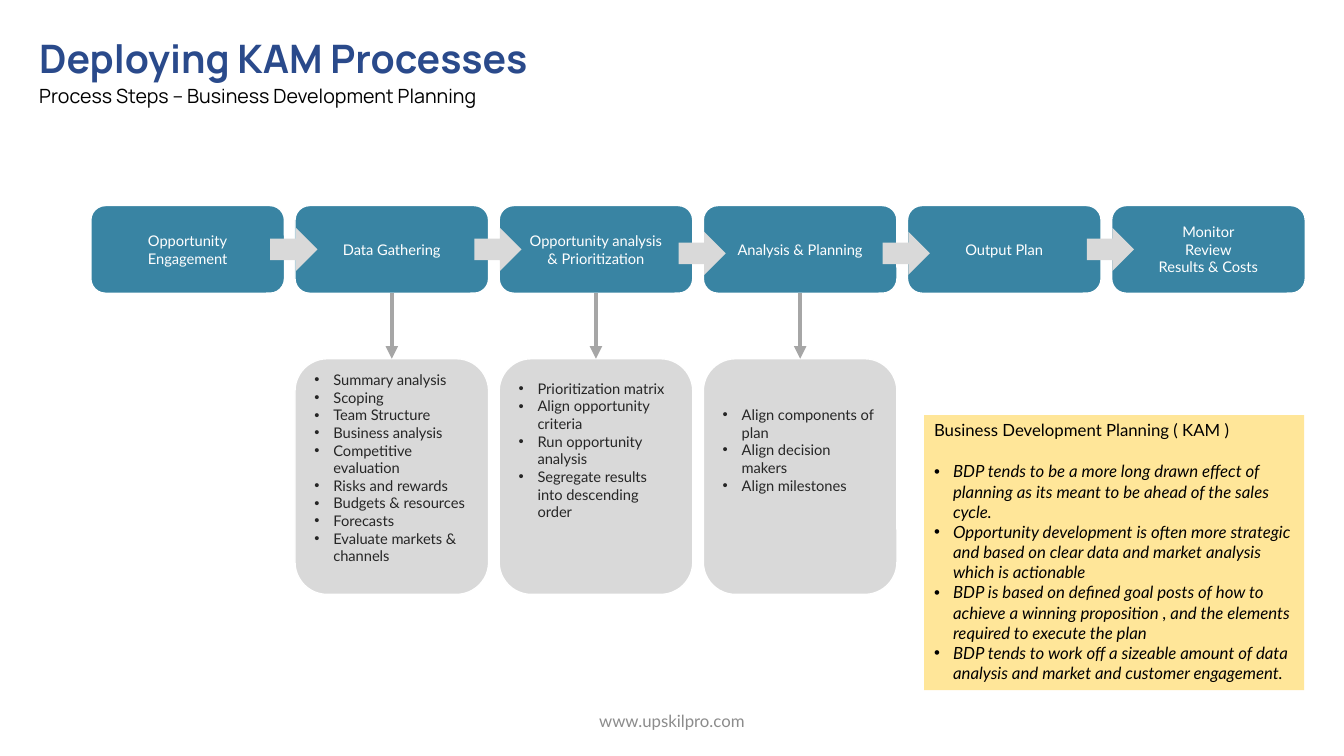
"""Build the slide on business development planning steps."""
from lxml import etree
from pptx import Presentation
from pptx.dml.color import RGBColor
from pptx.enum.shapes import MSO_CONNECTOR, MSO_SHAPE
from pptx.enum.text import MSO_ANCHOR, PP_ALIGN
from pptx.oxml.ns import qn
from pptx.util import Cm, Pt

TITLE = "Deploying KAM Processes"
SUB = "Process Steps – Business Development Planning"
STEPS = [
    ["Opportunity", "Engagement"],
    ["Data Gathering"],
    ["Opportunity analysis", "& Prioritization"],
    ["Analysis & Planning"],
    ["Output Plan"],
    ["Monitor", "Review", "Results & Costs"],
]
CARDS = [
    (1, 0.07, ["Summary analysis", "Scoping", "Team Structure", "Business analysis",
               "Competitive evaluation", "Risks and rewards", "Budgets & resources",
               "Forecasts", "Evaluate markets & channels"]),
    (2, 0.29, ["Prioritization matrix", "Align opportunity criteria",
               "Run opportunity analysis", "Segregate results into descending order"]),
    (3, 0.95, ["Align components of plan", "Align decision makers", "Align milestones"]),
]
ARROWS = [5.74, 5.74, 5.84, 5.84, 5.74]
HEAD = "Business Development Planning ( KAM )"
NOTES = [
    "BDP tends to be a more long drawn effect of planning as its meant to be ahead "
    "of the sales cycle.",
    "Opportunity development is often more strategic and based on clear data and "
    "market analysis which is actionable",
    "BDP is based on defined goal posts of how to achieve a winning proposition , "
    "and the elements required to execute the plan",
    "BDP tends to work off a sizeable amount of data analysis and market and "
    "customer engagement.",
]
SITE = "www.upskilpro.com"

NAVY = RGBColor(0x2A, 0x4A, 0x8B)
TEAL = RGBColor(0x39, 0x84, 0xA3)
LIGHT = RGBColor(0xD9, 0xD9, 0xD9)
MID = RGBColor(0xA6, 0xA6, 0xA6)
GREY = RGBColor(0x8C, 0x8C, 0x8C)
DARK = RGBColor(0x26, 0x26, 0x26)
SAND = RGBColor(0xFF, 0xE6, 0x99)
WHITE = RGBColor(0xFF, 0xFF, 0xFF)
BLACK = RGBColor(0, 0, 0)
ROUND = MSO_SHAPE.ROUNDED_RECTANGLE
RECT = MSO_SHAPE.RECTANGLE
ARROW = MSO_SHAPE.RIGHT_ARROW
LINE = MSO_CONNECTOR.STRAIGHT
TOP, MIDDLE = MSO_ANCHOR.TOP, MSO_ANCHOR.MIDDLE
LEFT, CENTER = PP_ALIGN.LEFT, PP_ALIGN.CENTER

START, PITCH, WIDE = 2.29, 5.145, 4.88
STEP_Y, STEP_H = 5.18, 2.21
CARD_Y, CARD_H = 9.04, 5.94


def add_shape(slide, kind, box, fill, edge=None):
    shape = slide.shapes.add_shape(kind, *map(Cm, box))
    shape.shadow.inherit = False
    shape.fill.solid()
    shape.fill.fore_color.rgb = fill
    if edge is None:
        shape.line.fill.background()
    else:
        shape.line.color.rgb = edge
        shape.line.width = Pt(1)
    return shape


def add_text(slide, box):
    return slide.shapes.add_textbox(*map(Cm, box))


def write(shape, lines, size, color, face="Lato", align=LEFT, anchor=TOP, bullet=False):
    frame = shape.text_frame
    frame.word_wrap = True
    frame.vertical_anchor = anchor
    frame.text = "\n".join(lines)
    for para in frame.paragraphs:
        para.alignment = align
        if bullet:
            add_bullet(para)
        font = para.font
        font.name, font.size = face, Pt(size)
        font.color.rgb = color
    return frame.paragraphs


def add_bullet(para):
    props = para._p.get_or_add_pPr()
    props.set("marL", str(Cm(0.48)))
    props.set("indent", str(Cm(-0.48)))
    etree.SubElement(props, qn("a:buFont")).set("typeface", "Arial")
    etree.SubElement(props, qn("a:buChar")).set("char", "•")


def add_link(slide, x):
    link = slide.shapes.add_connector(LINE, Cm(x), Cm(STEP_Y + STEP_H), Cm(x), Cm(CARD_Y))
    link.line.color.rgb = MID
    link.line.width = Pt(3)
    etree.SubElement(link.line._get_or_add_ln(), qn("a:tailEnd")).set("type", "triangle")
    etree.SubElement(link._element.spPr, qn("a:effectLst"))


def main():
    deck = Presentation()
    deck.slide_width, deck.slide_height = Cm(33.87), Cm(19.05)
    slide = deck.slides.add_slide(deck.slide_layouts[6])

    title = add_text(slide, (0.74, 0.73, 17.8, 2.08))
    head, sub = write(title, [TITLE, SUB], 14, BLACK, "Manrope")
    head.font.size, head.font.bold = Pt(28), True
    head.font.color.rgb = NAVY
    head.space_after = Pt(1)
    sub.line_spacing = 1.07

    for i, lines in enumerate(STEPS):
        step = add_shape(slide, ROUND, (START + i * PITCH, STEP_Y, WIDE, STEP_H), TEAL, WHITE)
        write(step, lines, 10.5, WHITE, align=CENTER, anchor=MIDDLE)

    for i, inset, lines in CARDS:
        x = START + i * PITCH
        card = add_shape(slide, ROUND, (x, CARD_Y, WIDE, CARD_H), LIGHT, WHITE)
        card.text_frame.margin_top = Cm(inset)
        write(card, lines, 10.5, DARK, bullet=True)
        add_link(slide, x + WIDE / 2)

    for i, y in enumerate(ARROWS):
        add_shape(slide, ARROW, (START + i * PITCH + 4.52, y, 1.19, 1.09), LIGHT)

    panel = add_shape(slide, RECT, (23.29, 10.46, 9.58, 6.93), SAND)
    head, *notes = write(panel, [HEAD] + NOTES, 12, BLACK)
    head.space_after = Pt(15)
    for note in notes:
        add_bullet(note)
        note.font.italic = True

    foot = add_text(slide, (11.22, 17.65, 11.43, 1.02))
    write(foot, [SITE], 12, GREY, align=CENTER, anchor=MIDDLE)
    deck.save("out.pptx")


if __name__ == "__main__":
    main()
